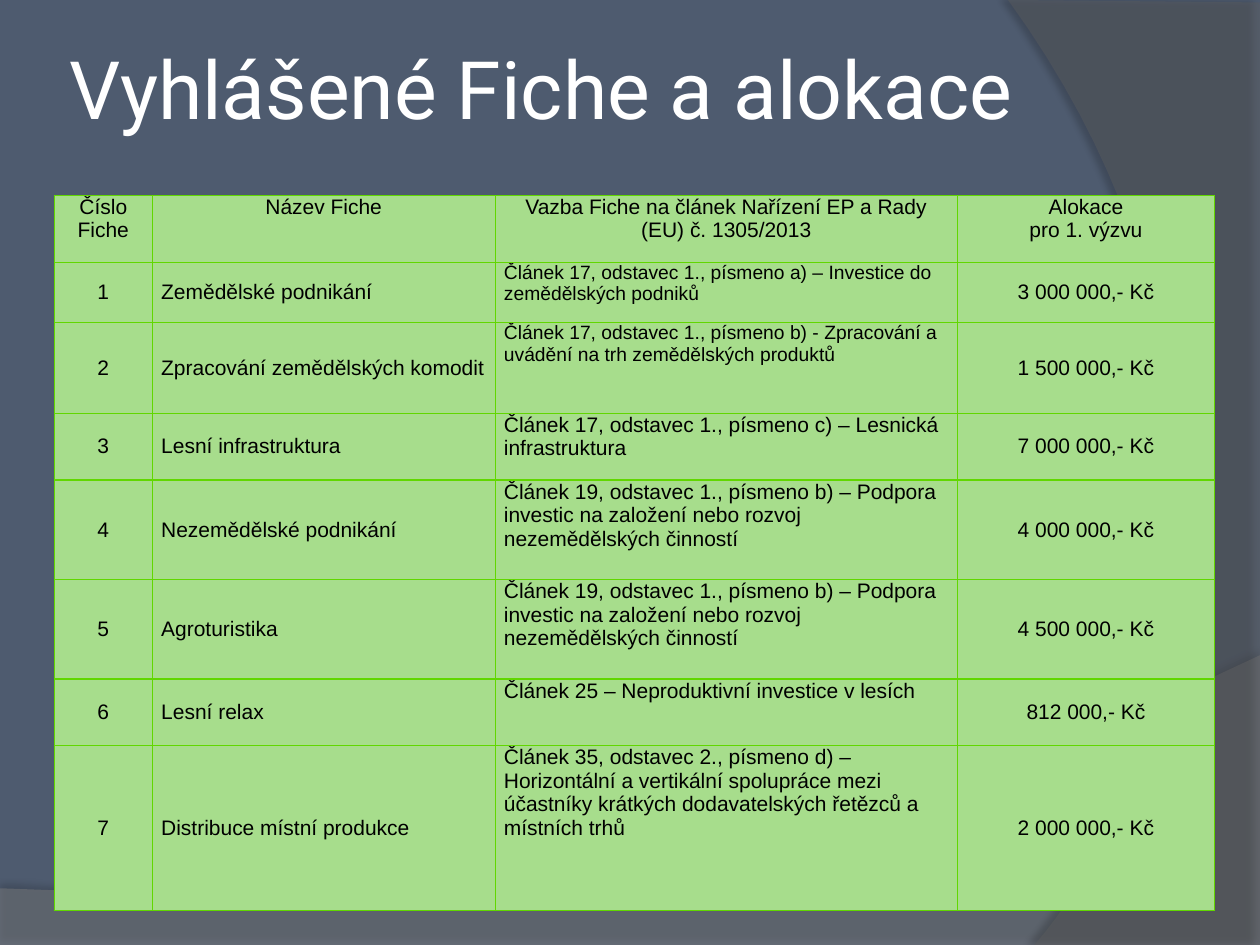
"""Build a slide with a table of announced grant calls and their allocations."""
from dataclasses import dataclass

from lxml import etree
from pptx import Presentation
from pptx import util as u
from pptx.dml.color import RGBColor
from pptx.enum import text
from pptx.oxml import ns

BACK = RGBColor(0x4E, 0x5B, 0x6F)
GREY = RGBColor(0x7F, 0x7F, 0x7F)
DARK = RGBColor(0x5E, 0x5E, 0x5E)
WHITE = RGBColor(0xFF, 0xFF, 0xFF)
BLACK = RGBColor(0, 0, 0)
CELL = RGBColor(0xA7, 0xDD, 0x8C)
BORDER = RGBColor(0x61, 0xD7, 0x00)
CENTER, LEFT = text.PP_ALIGN.CENTER, text.PP_ALIGN.LEFT
TOP, MIDDLE = text.MSO_ANCHOR.TOP, text.MSO_ANCHOR.MIDDLE


@dataclass
class Wave:
    points: list
    color: RGBColor
    alpha: int
    shadow_alpha: int
    distance: float
    angle: int


@dataclass
class Fiche:
    name: str
    article: str
    amount: str
    height: float
    size: int = 12


HEADER = ("Číslo Fiche", "Název Fiche",
          "Vazba Fiche na článek Nařízení EP a Rady (EU) č. 1305/2013",
          "Alokace\npro 1. výzvu")
WIDTHS = (0.78, 2.72, 3.67, 2.04)
HEADER_HEIGHT = 0.53
NONFARM = ("Článek 19, odstavec 1., písmeno b) – Podpora investic na založení "
           "nebo rozvoj nezemědělských činností")
FICHES = [
    Fiche("Zemědělské podnikání",
          "Článek 17, odstavec 1., písmeno a) – Investice do zemědělských podniků",
          "3 000 000,- Kč", 0.48, 11),
    Fiche("Zpracování zemědělských komodit",
          "Článek 17, odstavec 1., písmeno b) - Zpracování a uvádění na trh "
          "zemědělských produktů", "1 500 000,- Kč", 0.72, 11),
    Fiche("Lesní infrastruktura",
          "Článek 17, odstavec 1., písmeno c) – Lesnická infrastruktura",
          "7 000 000,- Kč", 0.53),
    Fiche("Nezemědělské podnikání", NONFARM, "4 000 000,- Kč", 0.79),
    Fiche("Agroturistika", NONFARM, "4 500 000,- Kč", 0.79),
    Fiche("Lesní relax", "Článek 25 – Neproduktivní investice v lesích",
          "812 000,- Kč", 0.53),
    Fiche("Distribuce místní produkce",
          "Článek 35, odstavec 2., písmeno d) – Horizontální a vertikální spolupráce "
          "mezi účastníky krátkých dodavatelských řetězců a místních trhů",
          "2 000 000,- Kč", 1.31),
]


def curve(a: tuple, b: tuple, c: tuple, d: tuple, steps: int = 40) -> list:
    """Return points along a cubic Bézier curve."""
    return [tuple((1 - t) ** 3 * i + 3 * t * (1 - t) ** 2 * j
                  + 3 * t * t * (1 - t) * k + t ** 3 * m
                  for i, j, k, m in zip(a, b, c, d))
            for t in (n / steps for n in range(steps + 1))]


WAVES = [
    Wave([(0, 7.05), (0, 7.51), (10, 7.51),
          *curve((10, 5.2), (5.59, 7.29), (3.91, 7.19), (0, 7.05))],
         GREY, 45, 35, 3.5, 270),
    Wave([(10, 0.02), (10, 7.5),
          *curve((8.21, 7.5), (9.35, 6.19), (10.18, 3), (8, 0))],
         DARK, 40, 45, 4, 180),
]


def add_child(parent, tag: str, **attrs):
    """Append a DrawingML element and return it."""
    return etree.SubElement(parent, ns.qn(tag), {k: str(v) for k, v in attrs.items()})


def add_wave(s, wave: Wave) -> None:
    """Draw a translucent wave with a soft shadow behind the title."""
    (x, y), *rest = [(u.Inches(px), u.Inches(py)) for px, py in wave.points]
    builder = s.shapes.build_freeform(x, y)
    builder.add_line_segments(rest, close=True)
    sp = builder.convert_to_shape()
    sp.fill.solid()
    sp.fill.fore_color.rgb = wave.color
    sp.line.fill.background()
    sp.shadow.inherit = False
    props = sp.element.spPr
    add_child(props.find(".//" + ns.qn("a:srgbClr")), "a:alpha", val=wave.alpha * 1000)
    shadow = add_child(props.find(ns.qn("a:effectLst")), "a:outerShdw",
                       blurRad=u.Pt(4), dist=u.Pt(wave.distance),
                       dir=wave.angle * 60000, algn="ctr", rotWithShape=0)
    color = add_child(shadow, "a:srgbClr", val=BLACK)
    add_child(color, "a:alpha", val=wave.shadow_alpha * 1000)
    s.shapes.title.element.addprevious(sp.element)


def write(tf, content: str, *, size: float, font: str = "Arial",
          color: RGBColor = BLACK, align=LEFT) -> None:
    """Fill a text frame, one paragraph per line of content."""
    for i, line in enumerate(content.split("\n")):
        p = tf.add_paragraph() if i else tf.paragraphs[0]
        p.alignment = align
        r = p.add_run()
        r.text = line
        r.font.size, r.font.name, r.font.color.rgb = u.Pt(size), font, color


def fill_cell(cell, content: str, *, size: float = 12, align=LEFT, anchor=MIDDLE) -> None:
    """Write and format one table cell."""
    write(cell.text_frame, content, size=size, align=align)
    cell.vertical_anchor = anchor
    cell.margin_left = cell.margin_right = u.Inches(0.07)
    cell.margin_top = cell.margin_bottom = 0
    props = cell._tc.get_or_add_tcPr()
    for side in ("a:lnL", "a:lnR", "a:lnT", "a:lnB"):
        line = add_child(props, side, w=u.Pt(0.75))
        add_child(add_child(line, "a:solidFill"), "a:srgbClr", val=BORDER)
    cell.fill.solid()
    cell.fill.fore_color.rgb = CELL


def add_fiche_table(s) -> None:
    """Add the table of calls."""
    heights = [HEADER_HEIGHT, *(f.height for f in FICHES)]
    table = s.shapes.add_table(len(heights), len(WIDTHS), u.Inches(0.43), u.Inches(1.55),
                               u.Inches(sum(WIDTHS)), u.Inches(sum(heights))).table
    table.first_row = table.horz_banding = False
    for column, width in zip(table.columns, WIDTHS):
        column.width = u.Inches(width)
    for row, height in zip(table.rows, heights):
        row.height = u.Inches(height)
    for col, label in enumerate(HEADER):
        fill_cell(table.cell(0, col), label, align=CENTER, anchor=TOP)
    for n, f in enumerate(FICHES, 1):
        fill_cell(table.cell(n, 0), str(n), align=CENTER)
        fill_cell(table.cell(n, 1), f.name)
        fill_cell(table.cell(n, 2), f.article, size=f.size, anchor=TOP)
        fill_cell(table.cell(n, 3), f.amount, align=CENTER)


def main() -> None:
    """Build and save the slide."""
    prs = Presentation()
    prs.slide_width, prs.slide_height = u.Inches(10), u.Inches(7.5)
    s = prs.slides.add_slide(prs.slide_layouts[5])
    s.background.fill.solid()
    s.background.fill.fore_color.rgb = BACK
    for wave in WAVES:
        add_wave(s, wave)
    title = s.shapes.title
    title.left, title.top = u.Inches(0.5), 0
    title.width, title.height = u.Inches(9.22), u.Inches(1.39)
    tf = title.text_frame
    tf.vertical_anchor = MIDDLE
    tf.margin_left = tf.margin_right = tf.margin_top = tf.margin_bottom = u.Inches(0.05)
    write(tf, "Vyhlášené Fiche a alokace", size=46, font="Roboto", color=WHITE)
    add_fiche_table(s)
    prs.save("out.pptx")


if __name__ == "__main__":
    main()
